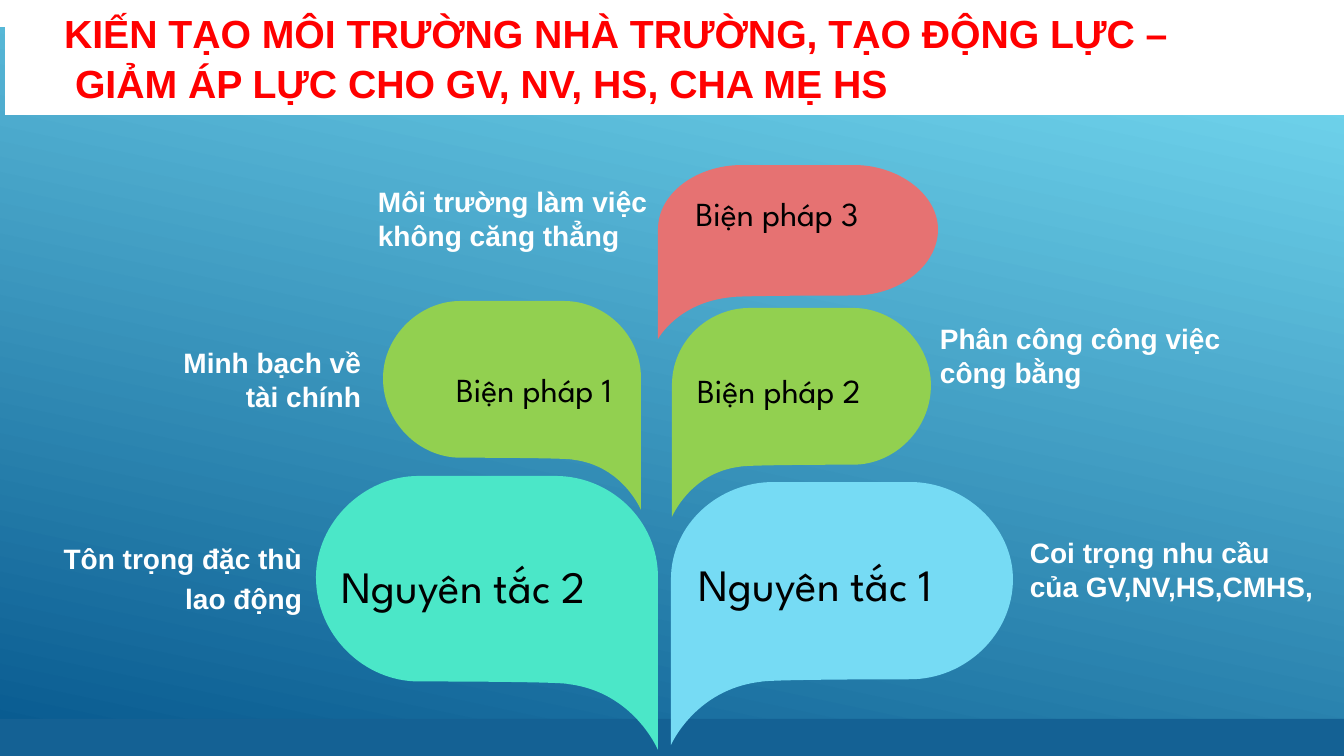
from dataclasses import dataclass

from lxml import etree
from pptx import Presentation
from pptx import util as u
from pptx.dml.color import RGBColor
from pptx.enum import shapes, text
from pptx.oxml.ns import qn

SLIDE_WIDTH, SLIDE_HEIGHT = 1344, 756
EMU_PER_PX = 12192000 / SLIDE_WIDTH
LEFT, CENTER, RIGHT = text.PP_ALIGN.LEFT, text.PP_ALIGN.CENTER, text.PP_ALIGN.RIGHT

LEAF_START = (0.7, 0)
LEAF_CURVES = [
    [(0.3, 0), (0.3, 0), (0.3, 0)],
    [(0.14, 0), (0, 0.16), (0, 0.37)],
    [(0, 0.58), (0, 1), (0, 1)],
    [(0, 1), (0.07, 0.79), (0.26, 0.76)],
    [(0.28, 0.75), (0.7, 0.75), (0.7, 0.75)],
    [(0.86, 0.75), (1, 0.58), (1, 0.37)],
    [(1, 0.17), (0.86, 0), (0.7, 0)],
]


@dataclass(frozen=True)
class Box:
    left: int
    top: int
    width: int
    height: int

    def emu(self) -> list[int]:
        return [px(n) for n in (self.left, self.top, self.width, self.height)]


@dataclass(frozen=True)
class Leaf:
    box: Box
    color: str
    mirrored: bool = False


@dataclass(frozen=True)
class Style:
    font: str
    size: int
    color: str
    bold: bool = False


@dataclass(frozen=True)
class Label:
    box: Box
    lines: list[str]
    style: Style
    align: text.PP_ALIGN = LEFT


PRINCIPLE = Style("League Spartan", 32, "000000")
MEASURE = Style("League Spartan", 24, "000000")
DETAIL = Style("Arial", 20, "FFFFFF", True)
TITLE = Style("Arial", 28, "FF0000", True)

LEAVES = [
    Leaf(Box(672, 308, 259, 209), "92D050"),
    Leaf(Box(658, 165, 280, 174), "E67272"),
    Leaf(Box(383, 301, 258, 209), "92D050", True),
    Leaf(Box(316, 476, 342, 274), "4BE7C8", True),
    Leaf(Box(671, 482, 342, 263), "76DBF4"),
]

LABELS = [
    Label(Box(689, 552, 309, 65), ["Nguyên tắc 1"], PRINCIPLE),
    Label(Box(332, 554, 309, 65), ["Nguyên tắc 2"], PRINCIPLE),
    Label(Box(426, 364, 216, 50), ["Biện pháp 1"], MEASURE, CENTER),
    Label(Box(671, 365, 216, 50), ["Biện pháp 2"], MEASURE, CENTER),
    Label(Box(669, 188, 216, 50), ["Biện pháp 3"], MEASURE, CENTER),
    Label(Box(1020, 531, 313, 98), ["Coi trọng nhu cầu của GV,NV,HS,CMHS,"], DETAIL),
    Label(Box(18, 537, 294, 98), ["Tôn trọng đặc thù", "lao động"], DETAIL, RIGHT),
    Label(Box(930, 317, 313, 98), ["Phân công công việc công bằng"], DETAIL),
    Label(Box(165, 341, 206, 98), ["Minh bạch về tài chính"], DETAIL, RIGHT),
    Label(Box(368, 180, 313, 98), ["Môi trường làm việc không căng thẳng"], DETAIL),
]

TITLE_LINES = [
    ("KIẾN TẠO MÔI TRƯỜNG NHÀ TRƯỜNG, TẠO ĐỘNG LỰC –", 49),
    ("GIẢM ÁP LỰC CHO GV, NV, HS, CHA MẸ HS", 60),
]


def px(value: float) -> int:
    return round(value * EMU_PER_PX)


def rgb(color: str) -> RGBColor:
    return RGBColor.from_string(color)


def fill_gradient(fill, angle: int, stops: list[tuple[float, str]]) -> None:
    fill.gradient()
    fill.gradient_angle = angle
    for stop, (position, color) in zip(fill.gradient_stops, stops):
        stop.position = position
        stop.color.rgb = rgb(color)


def finish_shape(shape, color: str) -> None:
    shape.shadow.inherit = False
    shape.fill.solid()
    shape.fill.fore_color.rgb = rgb(color)
    shape.line.fill.background()


def add_bar(slide, box: Box, color: str):
    shape = slide.shapes.add_shape(shapes.MSO_SHAPE.RECTANGLE, *box.emu())
    finish_shape(shape, color)
    return shape


def curve_outline(shape) -> None:
    segments = list(shape._element.iter(qn("a:lnTo")))
    for start in range(0, len(segments), 3):
        curve = etree.Element(qn("a:cubicBezTo"))
        segments[start].addprevious(curve)
        for segment in segments[start : start + 3]:
            curve.append(segment[0])
            segment.getparent().remove(segment)


def add_leaf(slide, leaf: Leaf) -> None:
    box = leaf.box
    points = [LEAF_START] + [point for curve in LEAF_CURVES for point in curve]
    outline = [
        (px(box.left + box.width * (1 - x if leaf.mirrored else x)), px(box.top + box.height * y))
        for x, y in points
    ]
    builder = slide.shapes.build_freeform(*outline[0])
    builder.add_line_segments(outline[1:], close=False)
    shape = builder.convert_to_shape()
    curve_outline(shape)
    finish_shape(shape, leaf.color)


def style_paragraph(paragraph, style: Style, align: text.PP_ALIGN) -> None:
    paragraph.alignment = align
    paragraph.font.name = style.font
    paragraph.font.size = u.Pt(style.size)
    paragraph.font.bold = style.bold
    paragraph.font.color.rgb = rgb(style.color)


def add_label(slide, label: Label) -> None:
    frame = slide.shapes.add_textbox(*label.box.emu()).text_frame
    frame.word_wrap = True
    frame.text = "\n".join(label.lines)
    for index, paragraph in enumerate(frame.paragraphs):
        style_paragraph(paragraph, label.style, label.align)
        if index:
            paragraph.space_before = u.Pt(4)


def add_title(slide) -> None:
    frame = add_bar(slide, Box(5, -3, 1339, 118), "FFFFFF").text_frame
    frame.word_wrap = True
    frame.vertical_anchor = text.MSO_ANCHOR.MIDDLE
    frame.margin_left = frame.margin_right = frame.margin_top = frame.margin_bottom = px(10)
    frame.text = "\n".join(line for line, _ in TITLE_LINES)
    for paragraph, (_, indent) in zip(frame.paragraphs, TITLE_LINES):
        style_paragraph(paragraph, TITLE, text.PP_ALIGN.JUSTIFY)
        paragraph.line_spacing = 1.07
        paragraph._p.get_or_add_pPr().set("indent", str(px(indent)))


def main() -> None:
    presentation = Presentation()
    presentation.slide_width = px(SLIDE_WIDTH)
    presentation.slide_height = px(SLIDE_HEIGHT)
    slide = presentation.slides.add_slide(presentation.slide_layouts[6])
    fill_gradient(slide.background.fill, 258, [(0.1, "6ED2EB"), (1, "06588E")])
    add_bar(slide, Box(0, 719, SLIDE_WIDTH, 37), "146194")
    top_bar = add_bar(slide, Box(0, 0, SLIDE_WIDTH, 27), "FFFFFF")
    fill_gradient(top_bar.fill, 0, [(0, "FFFFFF"), (1, "052F61")])
    for leaf in LEAVES:
        add_leaf(slide, leaf)
    for label in LABELS:
        add_label(slide, label)
    add_title(slide)
    presentation.save("out.pptx")


if __name__ == "__main__":
    main()
